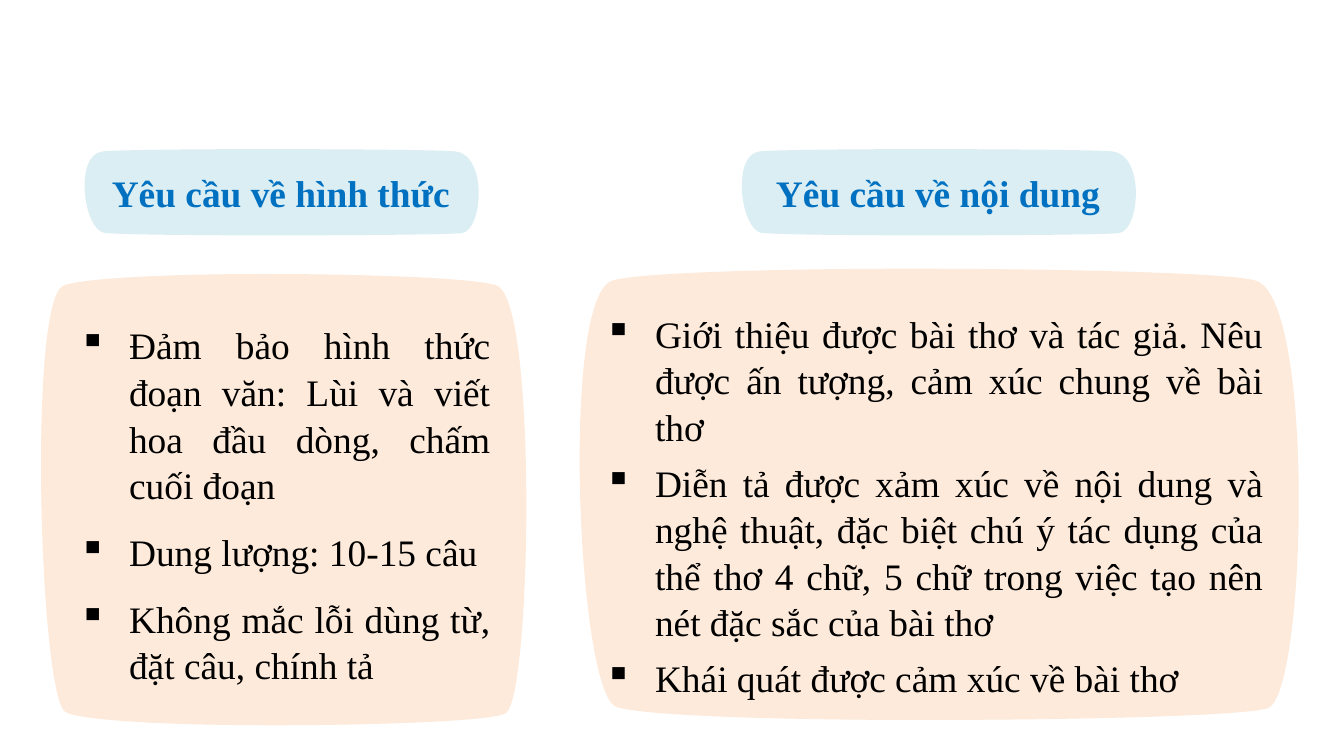
from dataclasses import dataclass

import lxml.etree
import pptx
import pptx.dml.color
import pptx.enum.text
import pptx.oxml.ns
import pptx.util
from pptx.util import Cm

RGB = pptx.dml.color.RGBColor
ALIGN = pptx.enum.text.PP_ALIGN
ANCHOR = pptx.enum.text.MSO_ANCHOR
qn = pptx.oxml.ns.qn


@dataclass(frozen=True)
class Theme:
    font: str = "Times New Roman"
    size: float = 20
    line_spacing: float = 1.04
    heading_fill: RGB = RGB(0xDB, 0xEE, 0xF4)
    heading_text: RGB = RGB(0x00, 0x70, 0xC0)
    panel_fill: RGB = RGB(0xFD, 0xEA, 0xDA)
    body_text: RGB = RGB(0, 0, 0)


@dataclass(frozen=True)
class Box:
    """Left, top, width and height in centimetres."""
    left: float
    top: float
    width: float
    height: float


@dataclass(frozen=True)
class Requirement:
    heading: str
    heading_box: Box
    panel_box: Box
    list_box: Box
    gap: float
    items: tuple[str, ...]


THEME = Theme()
HEADING_WIDTH, HEADING_HEIGHT, HEADING_TOP = 7.82, 1.63, 2.82

# Rounded outline in percent of its box: a start, then three Bézier points per curve.
OUTLINE_START = (46.3, 0)
OUTLINE_CURVES = (
    (27.4, 0), (9.4, 1), (6.8, 2.7),
    (0, 7), (2.3, 93), (7.3, 97),
    (10, 99), (28.5, 100), (47.9, 100),
    (69.4, 100), (91.8, 99), (93.8, 97.3),
    (98.8, 93.5), (100, 7.3), (92.2, 2.7),
    (89.5, 1), (67.3, 0), OUTLINE_START,
)

REQUIREMENTS = (
    Requirement(
        "Yêu cầu về hình thức",
        Box(1.4, HEADING_TOP, HEADING_WIDTH, HEADING_HEIGHT),
        Box(0.53, 5.18, 9.63, 8.53),
        Box(1.24, 5.94, 8.28, 7.01),
        10.9,
        ("Đảm bảo hình thức đoạn văn: Lùi và viết hoa đầu dòng, chấm cuối đoạn",
         "Dung lượng: 10-15 câu",
         "Không mắc lỗi dùng từ, đặt câu, chính tả"),
    ),
    Requirement(
        "Yêu cầu về nội dung",
        Box(13.82, HEADING_TOP, HEADING_WIDTH, HEADING_HEIGHT),
        Box(10.59, 5.08, 14.27, 8.53),
        Box(11.18, 5.72, 12.95, 7.44),
        5,
        ("Giới thiệu được bài thơ và tác giả. Nêu được ấn tượng, cảm xúc chung về bài thơ",
         "Diễn tả được xảm xúc về nội dung và nghệ thuật, đặc biệt chú ý tác dụng của "
         "thể thơ 4 chữ, 5 chữ trong việc tạo nên nét đặc sắc của bài thơ",
         "Khái quát được cảm xúc về bài thơ"),
    ),
)


def draw_blob(slide, box: Box, fill: RGB):
    """Draw the control polygon, then turn each three line segments into one curve."""
    def place(point: tuple[float, float]) -> tuple[int, int]:
        return (Cm(box.left + box.width * point[0] / 100),
                Cm(box.top + box.height * point[1] / 100))

    builder = slide.shapes.build_freeform(*place(OUTLINE_START))
    builder.add_line_segments([place(point) for point in OUTLINE_CURVES], close=True)
    blob = builder.convert_to_shape()
    segments = list(blob._element.iter(qn("a:lnTo")))
    for first in range(0, len(OUTLINE_CURVES), 3):
        curve = lxml.etree.Element(qn("a:cubicBezTo"))
        segments[first].addprevious(curve)
        for segment in segments[first:first + 3]:
            curve.append(segment[0])
            segment.getparent().remove(segment)
    blob.fill.solid()
    blob.fill.fore_color.rgb = fill
    blob.line.fill.background()
    blob.shadow.inherit = False
    return blob


def format_runs(paragraph, color: RGB, bold: bool = False) -> None:
    for run in paragraph.runs:
        run.font.name = THEME.font
        run.font.size = pptx.util.Pt(THEME.size)
        run.font.bold = bold
        run.font.color.rgb = color


def draw_heading(slide, requirement: Requirement) -> None:
    frame = draw_blob(slide, requirement.heading_box, THEME.heading_fill).text_frame
    frame.margin_left = frame.margin_right = Cm(0.25)
    frame.margin_top = frame.margin_bottom = Cm(0.25)
    frame.vertical_anchor = ANCHOR.MIDDLE
    frame.word_wrap = True
    frame.text = requirement.heading
    frame.paragraphs[0].alignment = ALIGN.CENTER
    format_runs(frame.paragraphs[0], THEME.heading_text, bold=True)


def add_bullet(paragraph) -> None:
    properties = paragraph._p.get_or_add_pPr()
    properties.set("marL", str(Cm(0.95)))
    properties.set("indent", str(-Cm(0.95)))
    lxml.etree.SubElement(properties, qn("a:buChar")).set("char", "▪")


def draw_list(slide, requirement: Requirement) -> None:
    box = requirement.list_box
    frame = slide.shapes.add_textbox(
        Cm(box.left), Cm(box.top), Cm(box.width), Cm(box.height)).text_frame
    frame.word_wrap = True
    frame.auto_size = pptx.enum.text.MSO_AUTO_SIZE.SHAPE_TO_FIT_TEXT
    for index, item in enumerate(requirement.items):
        paragraph = frame.add_paragraph() if index else frame.paragraphs[0]
        paragraph.text = item
        add_bullet(paragraph)
        paragraph.alignment = ALIGN.JUSTIFY
        paragraph.line_spacing = THEME.line_spacing
        if index:
            paragraph.space_before = pptx.util.Pt(requirement.gap)
        format_runs(paragraph, THEME.body_text)


def main() -> None:
    deck = pptx.Presentation()
    deck.slide_width, deck.slide_height = Cm(25.4), Cm(14.29)
    slide = deck.slides.add_slide(deck.slide_layouts[6])
    for requirement in REQUIREMENTS:
        draw_heading(slide, requirement)
    for requirement in REQUIREMENTS:
        draw_blob(slide, requirement.panel_box, THEME.panel_fill)
    for requirement in REQUIREMENTS:
        draw_list(slide, requirement)
    deck.save("out.pptx")


if __name__ == "__main__":
    main()
